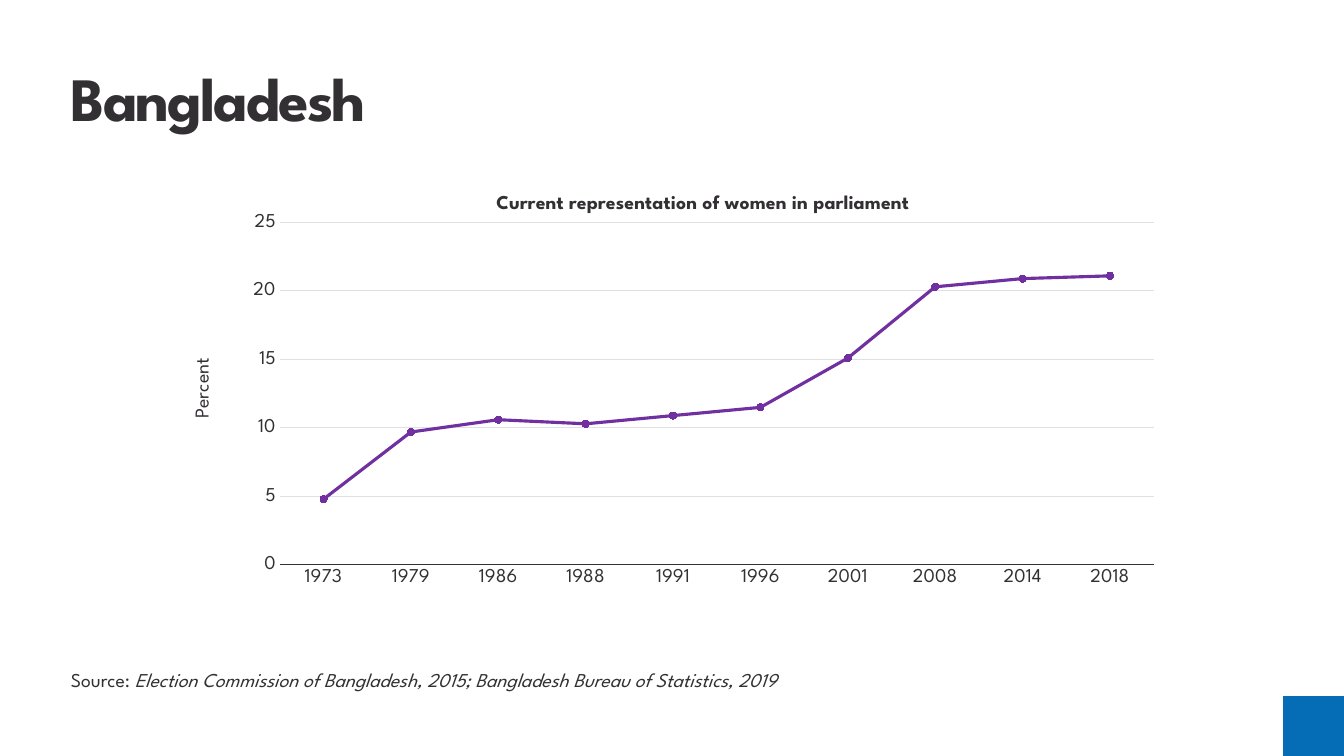
from dataclasses import dataclass

from pptx import Presentation
from pptx.chart.data import CategoryChartData
from pptx.dml.color import RGBColor
from pptx.enum.chart import XL_CHART_TYPE, XL_MARKER_STYLE, XL_TICK_MARK
from pptx.enum.shapes import MSO_SHAPE
from pptx.enum.text import MSO_ANCHOR, MSO_AUTO_SIZE
from pptx.oxml import parse_xml
from pptx.oxml.ns import nsdecls
from pptx.util import Pt

PX = 9525  # EMU per px, 96 px to the inch


@dataclass(frozen=True)
class Theme:
    family: str = "League Spartan"
    ink: RGBColor = RGBColor(0x33, 0x30, 0x33)
    accent: RGBColor = RGBColor(0x05, 0x6C, 0xB6)
    trend: RGBColor = RGBColor(0x70, 0x30, 0xA0)
    grid: RGBColor = RGBColor(0xE1, 0xDF, 0xE1)
    heading: int = 44
    body: int = 14


def place_in_chart(element, index, **fractions):
    """Give a chart part a manual layout in fractions of the chart."""
    for layout in element.findall("{*}layout"):
        element.remove(layout)
    target = '<c:layoutTarget val="inner"/>' if "w" in fractions else ""
    modes = "".join(f'<c:{axis}Mode val="edge"/>' for axis in "xy")
    sizes = "".join(f'<c:{key} val="{value}"/>' for key, value in fractions.items())
    element.insert(index, parse_xml(
        f'<c:layout {nsdecls("c")}><c:manualLayout>{target}{modes}{sizes}'
        "</c:manualLayout></c:layout>"))


class SlideBuilder:
    def __init__(self, slide, theme):
        self.slide = slide
        self.theme = theme

    def style(self, font, size, bold=False):
        font.name = self.theme.family
        font.size = Pt(size)
        font.bold = bold
        font.color.rgb = self.theme.ink

    def title(self, text, *box):
        heading = self.slide.shapes.title
        heading.left, heading.top, heading.width, heading.height = (v * PX for v in box)
        frame = heading.text_frame
        frame.text = text
        frame.auto_size = MSO_AUTO_SIZE.NONE
        frame.vertical_anchor = MSO_ANCHOR.TOP
        paragraph = frame.paragraphs[0]
        paragraph.alignment = 1
        self.style(paragraph.font, self.theme.heading, bold=True)
        paragraph.runs[0].font._element.set("spc", "-150")

    def corner(self, *box):
        square = self.slide.shapes.add_shape(MSO_SHAPE.RECTANGLE, *(v * PX for v in box))
        square.shadow.inherit = False
        square.fill.solid()
        square.fill.fore_color.rgb = self.theme.accent
        square.line.fill.background()

    def source(self, label, citation, *box):
        frame = self.slide.shapes.add_textbox(*(v * PX for v in box)).text_frame
        frame.word_wrap = True
        frame.auto_size = MSO_AUTO_SIZE.SHAPE_TO_FIT_TEXT
        paragraph = frame.paragraphs[0]
        paragraph.line_spacing = 1.07
        paragraph.space_after = Pt(8)
        self.style(paragraph.font, self.theme.body)
        paragraph.add_run().text = label
        cited = paragraph.add_run()
        cited.text = citation
        cited.font.italic = True

    def caption(self, title, text, x, y, bold=False):
        title.text_frame.text = text
        self.style(title.text_frame.paragraphs[0].font, self.theme.body, bold)
        place_in_chart(title._element, 1, x=x, y=y)

    def line_chart(self, heading, unit, shares, *box):
        theme = self.theme
        data = CategoryChartData(number_format="General")
        data.categories = list(shares)
        data.add_series("Series 1", list(shares.values()))
        chart = self.slide.shapes.add_chart(
            XL_CHART_TYPE.LINE_MARKERS, *(v * PX for v in box), data).chart
        chart.has_legend = False
        self.style(chart.font, 10)
        chart.has_title = True
        self.caption(chart.chart_title, heading, 0.32, 0.04, bold=True)
        place_in_chart(chart._chartSpace.chart.plotArea, 0,
                       x=0.106, y=0.116, w=0.878, h=0.79)

        # Axes
        years, percent = chart.category_axis, chart.value_axis
        for axis in (years, percent):
            axis.major_tick_mark = axis.minor_tick_mark = XL_TICK_MARK.NONE
            self.style(axis.tick_labels.font, theme.body)
        years.format.line.color.rgb = theme.ink
        years.format.line.width = Pt(0.75)
        percent.minimum_scale, percent.maximum_scale, percent.major_unit = 0, 25, 5
        percent.format.line.fill.background()
        percent.has_major_gridlines = True
        gridline = percent.major_gridlines.format.line
        gridline.color.rgb = theme.grid
        gridline.width = Pt(0.75)
        percent.has_title = True
        self.caption(percent.axis_title, unit, 0.015, 0.42)
        unit_body = percent.axis_title.text_frame._txBody.bodyPr
        unit_body.set("rot", "-5400000")
        unit_body.set("vert", "horz")

        # Series
        chart.plots[0].vary_by_categories = False
        trend = chart.plots[0].series[0]
        trend.smooth = False
        trend.format.line.color.rgb = theme.trend
        trend.format.line.width = Pt(2.25)
        trend.marker.style = XL_MARKER_STYLE.CIRCLE
        trend.marker.size = 5
        trend.marker.format.fill.solid()
        trend.marker.format.fill.fore_color.rgb = theme.trend
        trend.marker.format.line.color.rgb = theme.trend


def main():
    deck = Presentation()
    deck.slide_width, deck.slide_height = 1280 * PX, 720 * PX
    title_only = deck.slide_layouts[5]
    builder = SlideBuilder(deck.slides.add_slide(title_only), Theme())

    builder.corner(1222, 663, 58, 57)
    builder.title("Bangladesh", 58, 52, 1164, 73)
    women_in_parliament = {
        "1973": 4.8, "1979": 9.7, "1986": 10.6, "1988": 10.3, "1991": 10.9,
        "1996": 11.5, "2001": 15.1, "2008": 20.3, "2014": 20.9, "2018": 21.1,
    }
    builder.line_chart("Current representation of women in parliament", "Percent",
                       women_in_parliament, 166, 164, 948, 413)
    builder.source(
        "Source: ",
        "Election Commission of Bangladesh, 2015; Bangladesh Bureau of Statistics, 2019",
        58, 630, 944, 34)
    deck.save("out.pptx")


if __name__ == "__main__":
    main()
